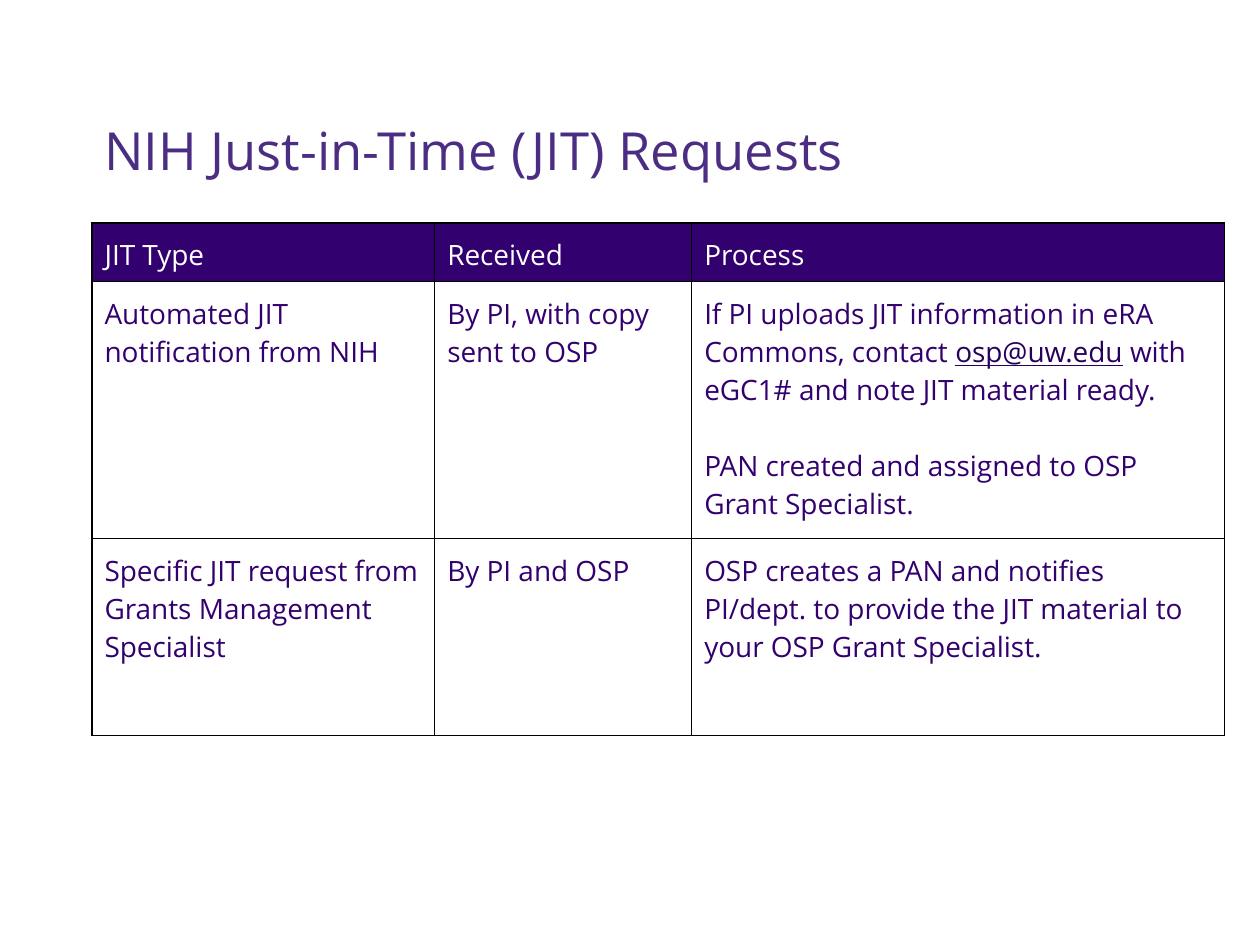
from lxml import etree
from pptx import Presentation
from pptx.dml.color import RGBColor
from pptx.enum import text
from pptx.oxml import ns
from pptx.util import Inches, Pt

FONT = "Open Sans"
COLORS = {
    "title": "4B2E83",
    "purple": "33006F",
    "link": "26005C",
    "white": "FFFFFF",
    "border": "000000",
}
EMAIL = "osp@uw.edu"
COLUMN_WIDTHS = [2.72, 2.04, 4.23]
ROW_HEIGHTS = [0.46, 2.04, 1.56]

# Each cell is a list of paragraphs
ROWS = [
    [["JIT Type"], ["Received"], ["Process"]],
    [
        ["Automated JIT notification from NIH"],
        ["By PI, with copy sent to OSP"],
        [
            f"If PI uploads JIT information in eRA Commons, contact {EMAIL}"
            " with eGC1# and note JIT material ready.",
            "PAN created and assigned to OSP Grant Specialist.",
        ],
    ],
    [
        ["Specific JIT request from Grants Management Specialist"],
        ["By PI and OSP"],
        [
            "OSP creates a PAN and notifies PI/dept. to provide the JIT"
            " material to your OSP Grant Specialist."
        ],
    ],
]


def format_run(run, size, color):
    run.font.name = FONT
    run.font.size = Pt(size)
    run.font.color.rgb = RGBColor.from_string(COLORS[color])


def add_title(slide, title):
    shape = slide.shapes.add_textbox(Inches(0.73), Inches(0.41), Inches(8.95), Inches(1.08))
    frame = shape.text_frame
    frame.word_wrap = True
    frame.vertical_anchor = text.MSO_ANCHOR.BOTTOM
    frame.text = title
    paragraph = frame.paragraphs[0]
    paragraph.line_spacing = 0.9
    format_run(paragraph.runs[0], 30, "title")


def set_borders(cell):
    properties = cell._tc.get_or_add_tcPr()
    for side in ("lnL", "lnR", "lnT", "lnB"):
        line = etree.SubElement(properties, ns.qn(f"a:{side}"), w=str(Pt(0.75)))
        fill = etree.SubElement(line, ns.qn("a:solidFill"))
        etree.SubElement(fill, ns.qn("a:srgbClr"), val=COLORS["border"])


def write_paragraph(paragraph, content, color):
    """Write the content, with the e-mail address underlined."""
    before, email, after = content.partition(EMAIL)
    for part in filter(None, (before, email, after)):
        run = paragraph.add_run()
        run.text = part
        format_run(run, 16, "link" if part == EMAIL else color)
        if part == EMAIL:
            run.font.underline = True


def fill_cell(cell, contents, is_header):
    cell.margin_left = cell.margin_right = Inches(0.1)
    cell.margin_top = cell.margin_bottom = Inches(0.1)
    set_borders(cell)
    if is_header:
        cell.fill.solid()
        cell.fill.fore_color.rgb = RGBColor.from_string(COLORS["purple"])
    else:
        cell.fill.background()
    frame = cell.text_frame
    for index, content in enumerate(contents):
        paragraph = frame.add_paragraph() if index else frame.paragraphs[0]
        if index:
            paragraph.space_before = Pt(21.8)
        write_paragraph(paragraph, content, "white" if is_header else "purple")


def add_request_table(slide):
    table = slide.shapes.add_table(
        len(ROWS), len(COLUMN_WIDTHS), Inches(0.73), Inches(1.77),
        Inches(sum(COLUMN_WIDTHS)), Inches(sum(ROW_HEIGHTS)),
    ).table
    table.horz_banding = False
    table.first_row = False
    for column, width in zip(table.columns, COLUMN_WIDTHS):
        column.width = Inches(width)
    for row_index, (row, height) in enumerate(zip(table.rows, ROW_HEIGHTS)):
        row.height = Inches(height)
        for cell, contents in zip(row.cells, ROWS[row_index]):
            fill_cell(cell, contents, row_index == 0)


def main():
    presentation = Presentation()
    presentation.slide_width = Inches(10)
    presentation.slide_height = Inches(7.5)
    slide = presentation.slides.add_slide(presentation.slide_layouts[6])

    # Heading
    add_title(slide, "NIH Just-in-Time (JIT) Requests")
    # Request types and how they are handled
    add_request_table(slide)

    presentation.save("out.pptx")


if __name__ == "__main__":
    main()
